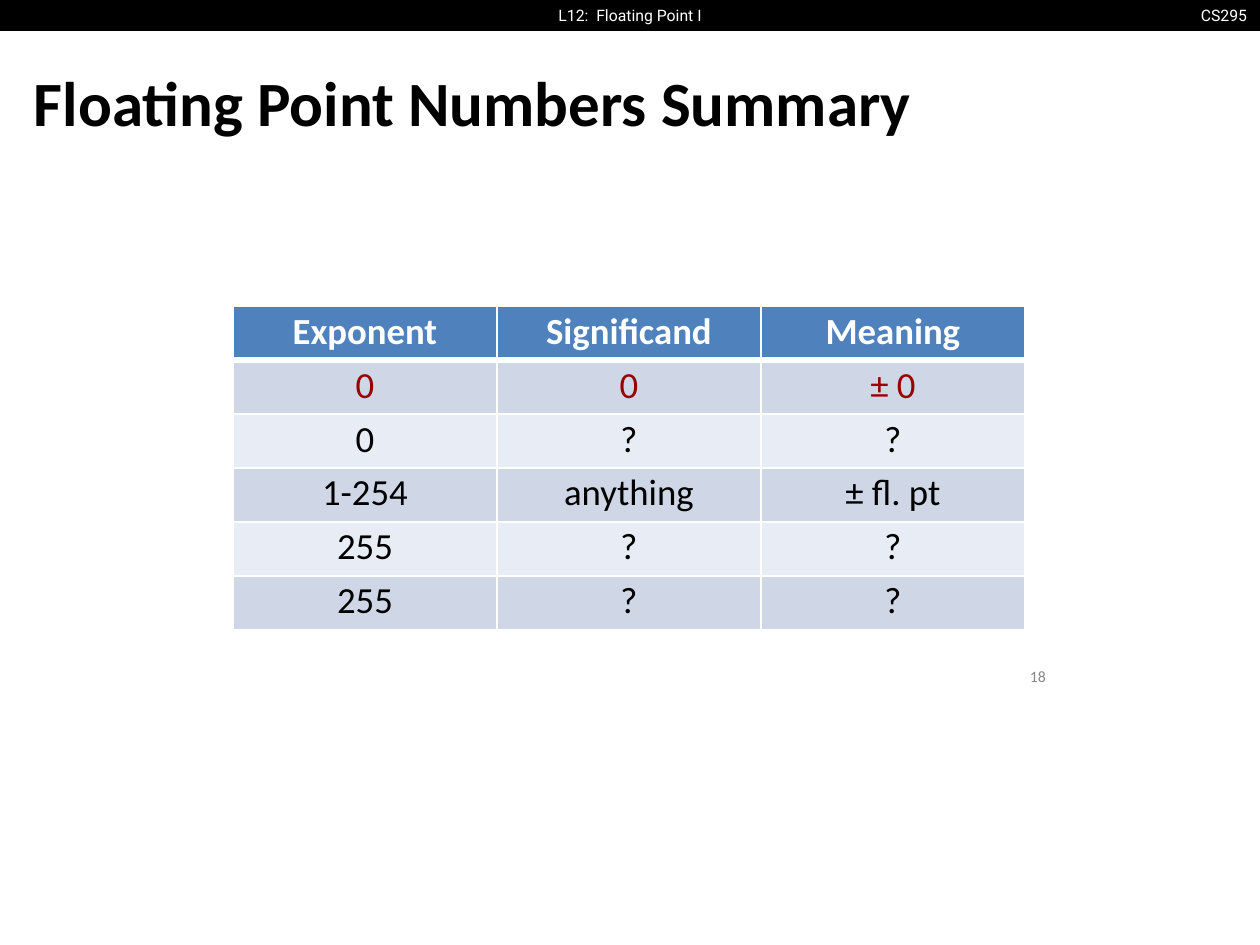
from dataclasses import dataclass

import pptx
import pptx.dml.color
import pptx.enum.shapes
import pptx.enum.text
import pptx.oxml
import pptx.oxml.ns
import pptx.util

ALIGN = pptx.enum.text.PP_ALIGN
ANCHOR = pptx.enum.text.MSO_ANCHOR
PX = 914400 / 126
COLORS = {
    "black": "000000",
    "white": "FFFFFF",
    "header": "4F81BD",
    "band_dark": "CFD7E7",
    "band_light": "E8ECF4",
    "zero": "990000",
    "page": "888888",
}


@dataclass
class Label:
    text: str
    box: tuple[int, int, int, int]
    size: int
    font: str
    color: str
    align: ALIGN
    side_margin: int = 0


@dataclass
class Row:
    texts: tuple[str, str, str]
    fill: str
    color: str = "black"
    bold: bool = False


def px(length: int) -> int:
    return round(length * PX)


def rgb(name: str) -> pptx.dml.color.RGBColor:
    return pptx.dml.color.RGBColor.from_string(COLORS[name])


def write(frame, text: str, size: int, font: str, color: str,
          align: ALIGN, bold: bool = False) -> None:
    frame.text = text
    paragraph = frame.paragraphs[0]
    paragraph.alignment = align
    run_font = paragraph.runs[0].font
    formats = {"size": pptx.util.Pt(size), "name": font, "bold": bold}
    for attribute, value in formats.items():
        setattr(run_font, attribute, value)
    run_font.color.rgb = rgb(color)


def set_frame(frame, side_margin: int = 0, wrap: bool = True) -> None:
    formats = {
        "margin_left": px(side_margin), "margin_right": px(side_margin),
        "margin_top": 0, "margin_bottom": 0,
        "word_wrap": wrap, "vertical_anchor": ANCHOR.MIDDLE,
        "auto_size": pptx.enum.text.MSO_AUTO_SIZE.NONE,
    }
    for attribute, value in formats.items():
        setattr(frame, attribute, value)


def add_label(slide, label: Label) -> None:
    frame = slide.shapes.add_textbox(*map(px, label.box)).text_frame
    set_frame(frame, label.side_margin, wrap=False)
    write(frame, label.text, label.size, label.font, label.color, label.align)


def add_borders(cell, widths: dict[str, float]) -> None:
    properties = cell._tc.get_or_add_tcPr()
    for side, width in widths.items():
        properties.append(pptx.oxml.parse_xml(
            f'<a:ln{side} {pptx.oxml.ns.nsdecls("a")} w="{pptx.util.Pt(width)}">'
            f'<a:solidFill><a:srgbClr val="{COLORS["white"]}"/></a:solidFill>'
            f'</a:ln{side}>'))


def add_summary(slide, rows: list[Row], left: int, top: int,
                column_width: int, row_height: int) -> None:
    columns = len(rows[0].texts)
    table = slide.shapes.add_table(
        len(rows), columns, px(left), px(top),
        px(column_width * columns), px(row_height * len(rows))).table
    table.horz_banding = False
    for r, row in enumerate(rows):
        # A thick rule separates the header from the body
        widths = {"L": 1.5, "R": 1.5,
                  "T": 4.25 if r == 1 else 1.5,
                  "B": 4.25 if r == 0 else 1.5}
        for c, text in enumerate(row.texts):
            cell = table.cell(r, c)
            formats = {"margin_left": 0, "margin_right": 0,
                       "margin_top": px(3), "margin_bottom": 0}
            for attribute, value in formats.items():
                setattr(cell, attribute, value)
            add_borders(cell, widths)
            cell.fill.solid()
            cell.fill.fore_color.rgb = rgb(row.fill)
            write(cell.text_frame, text, 21, "Calibri", row.color,
                  ALIGN.CENTER, row.bold)
            cell.text_frame.paragraphs[0].space_before = pptx.util.Pt(1.8)


LABELS = [
    Label("CS295", (1186, 0, 74, 31), 9, "Roboto", "white", ALIGN.RIGHT, 13),
    Label("L12:  Floating Point I", (513, 0, 234, 31), 9, "Roboto", "white",
          ALIGN.CENTER, 13),
    Label("18", (1030, 665, 20, 23), 9, "Calibri", "page", ALIGN.LEFT),
]
ROWS = [
    Row(("Exponent", "Significand", "Meaning"), "header", "white", True),
    Row(("0", "0", "± 0"), "band_dark", "zero"),
    Row(("0", "?", "?"), "band_light"),
    Row(("1-254", "anything", "± fl. pt"), "band_dark"),
    Row(("255", "?", "?"), "band_light"),
    Row(("255", "?", "?"), "band_dark"),
]


def main() -> None:
    deck = pptx.Presentation()
    deck.slide_width, deck.slide_height = px(1260), px(945)
    slide = deck.slides.add_slide(deck.slide_layouts[5])

    # Title
    title = slide.shapes.title
    title.left, title.top, title.width, title.height = map(px, (34, 61, 1158, 78))
    set_frame(title.text_frame)
    title.text_frame.margin_top = px(3)
    write(title.text_frame, "Floating Point Numbers Summary", 36, "Calibri",
          "black", ALIGN.LEFT, True)

    # Course bar
    bar = slide.shapes.add_shape(
        pptx.enum.shapes.MSO_SHAPE.RECTANGLE, 0, 0, deck.slide_width, px(31))
    bar.shadow.inherit = False
    bar.fill.solid()
    bar.fill.fore_color.rgb = rgb("black")
    bar.line.fill.background()

    # Bar texts and page number
    for label in LABELS:
        add_label(slide, label)

    # Encoding table
    add_summary(slide, ROWS, left=233, top=306, column_width=264, row_height=54)

    deck.save("out.pptx")


if __name__ == "__main__":
    main()
